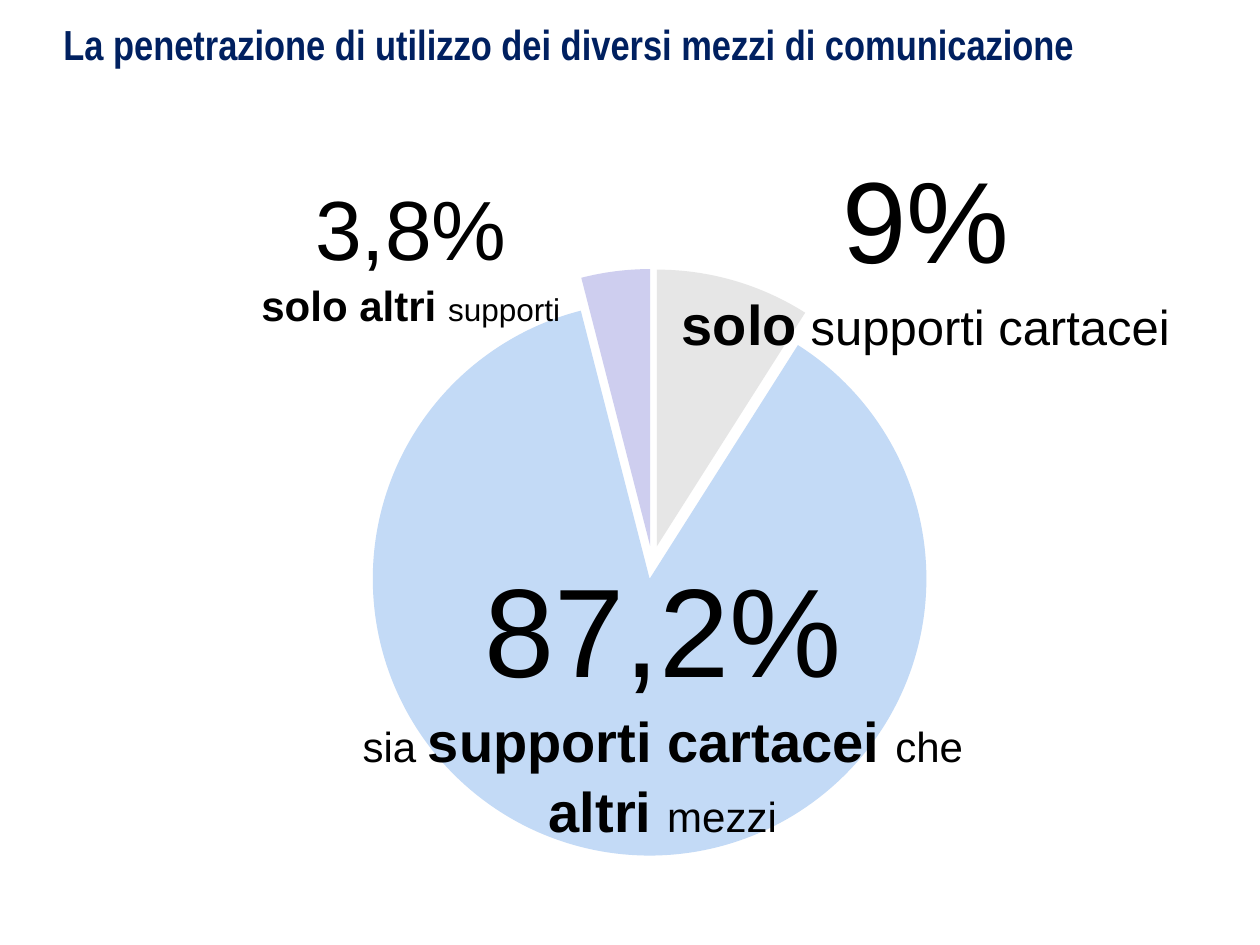
from dataclasses import dataclass

from lxml.etree import SubElement
from pptx import Presentation
from pptx.chart.data import CategoryChartData
from pptx.dml.color import RGBColor
from pptx.enum.chart import XL_CHART_TYPE as ChartType
from pptx.enum.text import MSO_ANCHOR as Anchor, PP_ALIGN as Align
from pptx.oxml import parse_xml
from pptx.oxml.ns import nsdecls, qn
from pptx.slide import Slide
from pptx.util import Pt

COLORS = {
    "title": "002060",
    "text": "000000",
    "chart_text": "53616A",
    "paper_only": "E6E6E6",
    "both": "C3DAF6",
    "other_only": "CECEEF",
}
SERIES_EXPLOSION = 15
SLICE_EXPLOSION = 6


@dataclass(frozen=True)
class Run:
    text: str
    size: float
    bold: bool = False


@dataclass(frozen=True)
class Callout:
    left: float
    top: float
    width: float
    height: float
    share: Run
    lines: tuple[tuple[Run, ...], ...]


@dataclass(frozen=True)
class Slice:
    category: str
    value: float
    color: str


SLICES = (
    Slice("1", 9, "paper_only"),
    Slice("2", 87, "both"),
    Slice("3", 4, "other_only"),
)

CALLOUTS = (
    Callout(163.5, 307.5, 430.5, 172, Run("87,2%", 72), (
        (Run("sia ", 24), Run("supporti cartacei ", 32, True), Run("che", 24)),
        (Run("altri ", 32, True), Run("mezzi", 24)),
    )),
    Callout(373.5, 77, 311, 126, Run("9%", 66), (
        (Run("solo", 32, True), Run(" supporti cartacei", 28)),
    )),
    Callout(101.5, 94.5, 266.5, 94.5, Run("3,8%", 48), (
        (Run("solo altri ", 24, True), Run("supporti", 18)),
    )),
)


def rgb(name: str) -> RGBColor:
    return RGBColor.from_string(COLORS[name])


def place(shape, left: float, top: float, width: float, height: float) -> None:
    shape.left, shape.top = Pt(left), Pt(top)
    shape.width, shape.height = Pt(width), Pt(height)


def add_title(slide: Slide, text: str) -> None:
    title = slide.shapes.title
    place(title, 29, 7, 628, 36)
    frame = title.text_frame
    frame.text = text
    frame.vertical_anchor = Anchor.MIDDLE
    paragraph = frame.paragraphs[0]
    paragraph.alignment = Align.LEFT
    font = paragraph.font
    font.name, font.size, font.bold = "Arial Narrow", Pt(24), True
    font.color.rgb = rgb("title")


def add_pie(slide: Slide, slices: tuple[Slice, ...]) -> None:
    data = CategoryChartData()
    data.categories = [item.category for item in slices]
    data.add_series("Series 1", [item.value for item in slices])
    chart = slide.shapes.add_chart(
        ChartType.PIE, Pt(88), Pt(128), Pt(569.5), Pt(383), data).chart
    chart.has_title = False
    chart.has_legend = False
    chart.font.name, chart.font.size = "Arial", Pt(18)
    chart.font.color.rgb = rgb("chart_text")
    plot = chart.plots[0]
    plot.vary_by_categories = True
    series = plot.series[0]
    for index, item in enumerate(slices):
        point = series.points[index]
        point.format.fill.solid()
        point.format.fill.fore_color.rgb = rgb(item.color)
        point.format.line.fill.background()
    explosion = parse_xml(f'<c:explosion {nsdecls("c")} val="{SERIES_EXPLOSION}"/>')
    data_points = series._element.findall(qn("c:dPt"))
    data_points[0].addprevious(explosion)
    for data_point in data_points:
        offset = parse_xml(f'<c:explosion {nsdecls("c")} val="{SLICE_EXPLOSION}"/>')
        data_point.find(qn("c:spPr")).addprevious(offset)
    plot_area = chart._chartSpace.chart.plotArea
    layout = plot_area.find(qn("c:layout"))
    if layout is None:
        layout = parse_xml(f'<c:layout {nsdecls("c")}/>')
        plot_area.insert(0, layout)
    manual = SubElement(layout, qn("c:manualLayout"))
    settings = {"layoutTarget": "inner", "xMode": "edge", "yMode": "edge",
                "x": "0.18", "y": "0.03", "w": "0.64", "h": "0.95"}
    for tag, value in settings.items():
        SubElement(manual, qn(f"c:{tag}")).set("val", value)


def add_run(paragraph, run: Run) -> None:
    text_run = paragraph.add_run()
    text_run.text = run.text
    text_run.font.size, text_run.font.bold = Pt(run.size), run.bold


def format_paragraph(paragraph) -> None:
    paragraph.alignment = Align.CENTER
    paragraph.line_spacing = 1.05
    paragraph.font.name = "Arial"
    paragraph.font.color.rgb = rgb("text")


def add_callout(slide: Slide, callout: Callout) -> None:
    box = slide.shapes.add_textbox(
        Pt(callout.left), Pt(callout.top), Pt(callout.width), Pt(callout.height))
    frame = box.text_frame
    frame.word_wrap = True
    share = frame.paragraphs[0]
    format_paragraph(share)
    add_run(share, callout.share)
    description = frame.add_paragraph()
    format_paragraph(description)
    for index, line in enumerate(callout.lines):
        if index:
            description.add_line_break()
        for run in line:
            add_run(description, run)


def main() -> None:
    presentation = Presentation()
    presentation.slide_width, presentation.slide_height = Pt(720), Pt(540)
    slide = presentation.slides.add_slide(presentation.slide_layouts[5])
    add_title(slide, "La penetrazione di utilizzo dei diversi mezzi di comunicazione")
    add_pie(slide, SLICES)
    for callout in CALLOUTS:
        add_callout(slide, callout)
    presentation.save("out.pptx")


if __name__ == "__main__":
    main()
